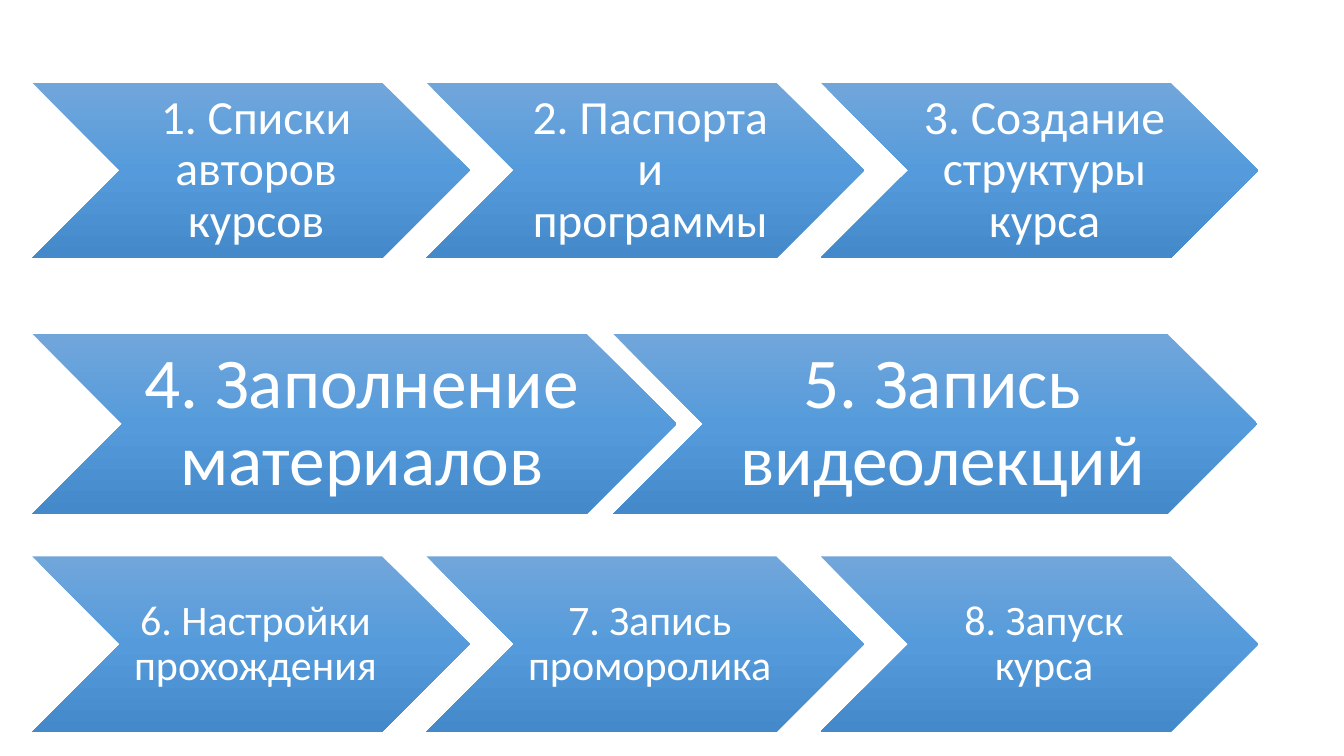
from copy import deepcopy
from pptx import Presentation
from pptx import util as u
from pptx.dml.color import RGBColor
from pptx.enum import shapes, text
from pptx.oxml.ns import qn


def rgb(value):
    return RGBColor.from_string(value)


GRADIENT = [(0, "71A6DB"), (0.5, "559BDB"), (1, "448ACA")]
LEFT = 0.32
ROWS = [
    (0.82, 4.34, 1.74, 3.91, 34, 0.15, 0.05,
     ["1. Списки авторов курсов", "2. Паспорта и программы", "3. Создание структуры курса"]),
    (3.31, 6.39, 1.79, 5.76, 51, 0.22, 0.07,
     ["4. Заполнение материалов", "5. Запись видеолекций"]),
    (5.52, 4.34, 1.74, 3.91, 30, 0.13, 0.04,
     ["6. Настройки прохождения", "7. Запись проморолика", "8. Запуск курса"]),
]

prs = Presentation()
prs.slide_width, prs.slide_height = u.Inches(13.33), u.Inches(7.5)
s = prs.slides.add_slide(prs.slide_layouts[6])

for top, width, height, pitch, size, inset_left, inset, steps in ROWS:
    row = s.shapes.add_group_shape()
    for i, step in enumerate(steps):
        sp = row.shapes.add_shape(
            shapes.MSO_SHAPE.CHEVRON, u.Inches(LEFT + i * pitch), u.Inches(top),
            u.Inches(width), u.Inches(height))
        sp.shadow.inherit = False
        sp.line.fill.background()
        sp.fill.gradient()
        sp.fill.gradient_angle = 270
        stops = sp.element.spPr.find(".//" + qn("a:gsLst"))
        stops.insert(1, deepcopy(stops[0]))
        for stop, (position, colour) in zip(sp.fill.gradient_stops, GRADIENT):
            stop.position = position
            stop.color.rgb = rgb(colour)

        tf = sp.text_frame
        tf.word_wrap = True
        tf.vertical_anchor = text.MSO_ANCHOR.MIDDLE
        tf.margin_left = u.Inches(inset_left)
        tf.margin_right = tf.margin_top = tf.margin_bottom = u.Inches(inset)
        p = tf.paragraphs[0]
        p.text = step
        p.alignment = text.PP_ALIGN.CENTER
        p.line_spacing = 0.9
        p.font.name = "Calibri"
        p.font.size = u.Pt(size)
        p.font.color.rgb = rgb("FFFFFF")

prs.save("out.pptx")
